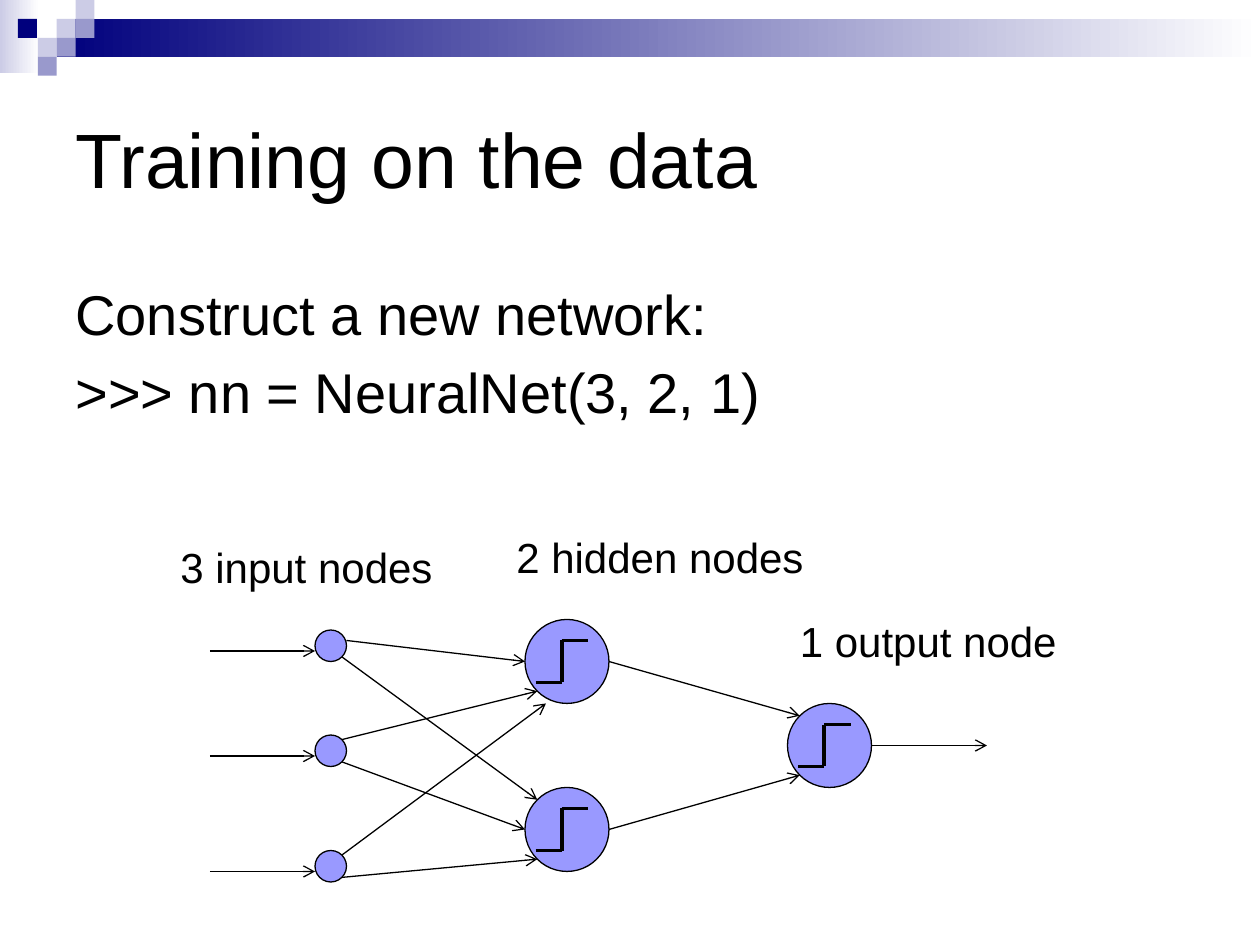
from dataclasses import dataclass
from math import cos, radians, sin

from lxml import etree
from pptx import Presentation
from pptx.dml.color import RGBColor
from pptx.enum.shapes import MSO_CONNECTOR, MSO_SHAPE
from pptx.enum.text import MSO_ANCHOR, MSO_AUTO_SIZE
from pptx.oxml.ns import qn
from pptx.util import Inches, Pt

RECT, OVAL, STRAIGHT = MSO_SHAPE.RECTANGLE, MSO_SHAPE.OVAL, MSO_CONNECTOR.STRAIGHT
TOP, MIDDLE = MSO_ANCHOR.TOP, MSO_ANCHOR.MIDDLE
CELL = 1 / 12  # inches; the slide is a grid of 120 columns by 90 rows
PIXEL = 1.8  # cells in one square of the header mosaic


@dataclass(frozen=True)
class Theme:
    font: str = "Arial"
    ink: str = "000000"
    paper: str = "FFFFFF"
    navy: str = "00007D"
    mid: str = "9999CC"
    pale: str = "CCCCE6"
    neuron: str = "9999FF"
    title: int = 44
    body: int = 32
    label: int = 24
    thin: float = 0.75
    thick: float = 2.25


@dataclass(frozen=True)
class Node:
    left: float
    top: float
    size: float

    def rim(self, degrees):
        """Point on the circle, clockwise from its right-hand side."""
        radius, angle = self.size / 2, radians(degrees)
        return (self.left + radius * (1 + cos(angle)),
                self.top + radius * (1 + sin(angle)))


def cells(*counts):
    return [Inches(count * CELL) for count in counts]


class Canvas:
    def __init__(self, slide, theme):
        self.slide = slide
        self.theme = theme

    def shape(self, kind, left, top, width, height):
        shape = self.slide.shapes.add_shape(kind, *cells(left, top, width, height))
        shape.shadow.inherit = False
        return shape

    def block(self, left, top, width, height, color, fade=False):
        """Header rectangle in mosaic squares, optionally fading to paper."""
        block = self.shape(RECT, *(PIXEL * n for n in (left, top, width, height)))
        block.line.fill.background()
        if fade:
            block.fill.gradient()
            block.fill.gradient_angle = 0
            for stop, shade in zip(block.fill.gradient_stops, (color, self.theme.paper)):
                stop.color.rgb = RGBColor.from_string(shade)
        else:
            block.fill.solid()
            block.fill.fore_color.rgb = RGBColor.from_string(color)

    def line(self, start, end, weight, arrow=False):
        line = self.slide.shapes.add_connector(STRAIGHT, *cells(*start, *end))
        line.line.color.rgb = RGBColor.from_string(self.theme.ink)
        line.line.width = Pt(weight)
        if arrow:
            etree.SubElement(line.line._get_or_add_ln(), qn("a:tailEnd"), type="arrow")
        etree.SubElement(line._element.spPr, qn("a:effectLst"))

    def arrow(self, start, end):
        self.line(start, end, self.theme.thin, arrow=True)

    def node(self, node):
        circle = self.shape(OVAL, node.left, node.top, node.size, node.size)
        circle.fill.solid()
        circle.fill.fore_color.rgb = RGBColor.from_string(self.theme.neuron)
        circle.line.color.rgb = RGBColor.from_string(self.theme.ink)
        circle.line.width = Pt(self.theme.thin)

    def threshold_node(self, node):
        """Node with a step function drawn inside."""
        self.node(node)
        step = [(node.left + x, node.top + y)
                for x, y in ((1, 6), (3.5, 6), (3.5, 2), (6, 2))]
        for start, end in zip(step, step[1:]):
            self.line(start, end, self.theme.thick)

    def text(self, left, top, width, height, lines, size, anchor=TOP, wrap=True):
        box = self.slide.shapes.add_textbox(*cells(left, top, width, height))
        frame = box.text_frame
        frame.word_wrap = wrap
        frame.vertical_anchor = anchor
        frame.auto_size = MSO_AUTO_SIZE.NONE if wrap else MSO_AUTO_SIZE.SHAPE_TO_FIT_TEXT
        for index, line in enumerate(lines):
            paragraph = frame.add_paragraph() if index else frame.paragraphs[0]
            if index:
                paragraph.space_before = Pt(0.2 * size)
            run = paragraph.add_run()
            run.text = line
            run.font.name = self.theme.font
            run.font.size = Pt(size)
            run.font.color.rgb = RGBColor.from_string(self.theme.ink)


def draw_header(canvas):
    theme = canvas.theme
    canvas.block(0, 0, 2.07, 3.87, theme.pale, fade=True)
    canvas.block(3, 1, 63.67, 2, theme.navy, fade=True)
    mosaic = ((3, 1, theme.pale), (4, 0, theme.pale), (4, 1, theme.mid),
              (2, 2, theme.pale), (0.95, 1, theme.navy), (3, 2, theme.mid),
              (2, 3, theme.mid))
    for column, row, color in mosaic:
        canvas.block(column, row, 1, 1, color)


def draw_network(canvas):
    inputs = [Node(30, row, 3) for row in (60, 70, 81)]
    hidden = [Node(50, row, 8) for row in (59, 75)]
    output = Node(75, 67, 8)

    for node, row in zip(inputs, (62, 72, 83)):
        canvas.node(node)
        canvas.arrow((20, row), (30, row))
    for node in (*hidden, output):
        canvas.threshold_node(node)

    first, second, third = inputs
    upper, lower = hidden
    edges = (
        ((33, 61), upper.rim(180)),
        (first.rim(45), lower.rim(225)),
        (second.rim(-45), upper.rim(135)),
        (second.rim(45), lower.rim(180)),
        (third.rim(-45), (52, 67)),
        (third.rim(45), lower.rim(135)),
        (upper.rim(0), output.rim(225)),
        (lower.rim(0), output.rim(135)),
        (output.rim(0), (94, 71)),
    )
    for start, end in edges:
        canvas.arrow(start, end)

    labels = ((16, 51, 26.6, "3 input nodes"), (48, 50, 30, "2 hidden nodes"),
              (75, 58, 27.1, "1 output node"))
    for left, top, width, label in labels:
        canvas.text(left, top, width, 6, [label], canvas.theme.label, wrap=False)


def main():
    deck = Presentation()
    deck.slide_width, deck.slide_height = cells(120, 90)
    theme = Theme()
    canvas = Canvas(deck.slides.add_slide(deck.slide_layouts[6]), theme)
    draw_header(canvas)
    canvas.text(6, 6, 108, 18, ["Training on the data"], theme.title, anchor=MIDDLE)
    canvas.text(6, 26, 108, 16,
                ["Construct a new network:", ">>> nn = NeuralNet(3, 2, 1)"], theme.body)
    draw_network(canvas)
    deck.save("out.pptx")


if __name__ == "__main__":
    main()
